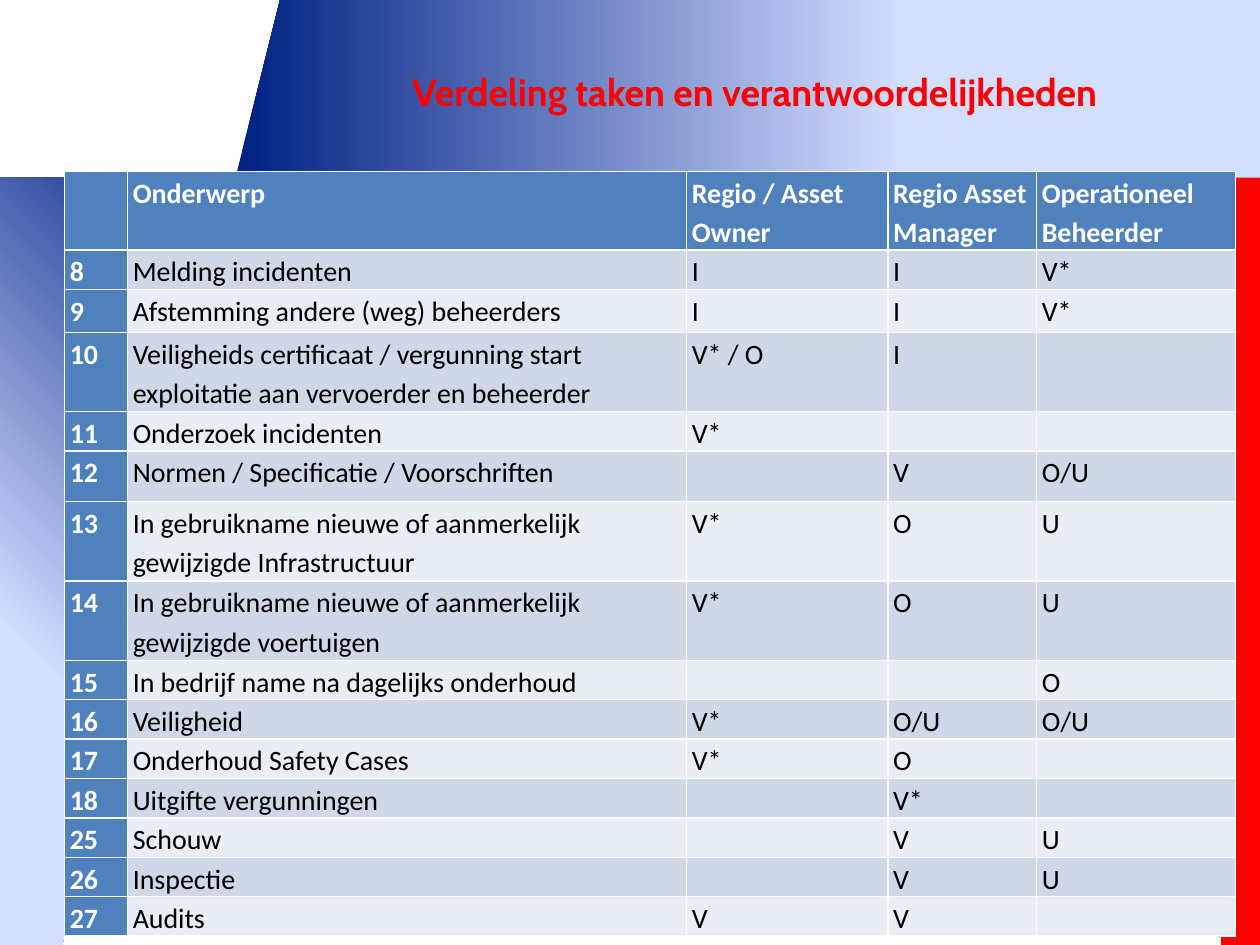
from lxml import etree
from pptx import Presentation
from pptx.dml.color import RGBColor
from pptx.enum.shapes import MSO_SHAPE
from pptx.enum.text import MSO_ANCHOR, PP_ALIGN
from pptx.oxml import parse_xml
from pptx.oxml.ns import nsdecls, qn
from pptx.util import Pt

COLORS = {
    "red": "FF0000", "white": "FFFFFF", "black": "000000",
    "header": "4F81BD", "dark band": "D0D8E8", "light band": "E9EDF4",
}
GRADIENT = [(0, "002083"), (53, "D4DEFF"), (83, "D4DEFF"), (100, "96AB94")]

COLUMN_WIDTHS = [36, 319.5, 115, 85, 113.5]
ROW_HEIGHTS = [36, 17.3, 24.5, 45.4, 17.3, 28.8, 45.4, 45.4, 22.3] + [17.3] * 6
ROWS = [
    ("", "Onderwerp", "Regio / Asset Owner", "Regio Asset Manager",
     "Operationeel\nBeheerder"),
    ("8", "Melding incidenten", "I", "I", "V*"),
    ("9", "Afstemming andere (weg) beheerders", "I", "I", "V*"),
    ("10", "Veiligheids certificaat / vergunning start exploitatie "
           "aan vervoerder en beheerder", "V* / O", "I", ""),
    ("11", "Onderzoek incidenten", "V*", "", ""),
    ("12", "Normen / Specificatie / Voorschriften", "", "V", "O/U"),
    ("13", "In gebruikname nieuwe of aanmerkelijk gewijzigde Infrastructuur",
     "V*", "O", "U"),
    ("14", "In gebruikname nieuwe of aanmerkelijk gewijzigde voertuigen",
     "V*", "O", "U"),
    ("15", "In bedrijf name na dagelijks onderhoud", "", "", "O"),
    ("16", "Veiligheid", "V*", "O/U", "O/U"),
    ("17", "Onderhoud Safety Cases", "V*", "O", ""),
    ("18", "Uitgifte vergunningen", "", "V*", ""),
    ("25", "Schouw", "", "V", "U"),
    ("26", "Inspectie", "", "V", "U"),
    ("27", "Audits", "V", "V", ""),
]


def color(name):
    return RGBColor.from_string(COLORS[name])


def add_panel(slide, kind, left, top, width, height):
    shape = slide.shapes.add_shape(kind, Pt(left), Pt(top), Pt(width), Pt(height))
    shape.shadow.inherit = False
    shape.line.fill.background()
    shape.fill.solid()
    shape.fill.fore_color.rgb = color("red")
    return shape


def set_gradient(shape, angle):
    """Replace the solid fill by the blue gradient, angle in clockwise degrees."""
    stops = "".join(
        f'<a:gs pos="{position * 1000}"><a:srgbClr val="{value}"/></a:gs>'
        for position, value in GRADIENT)
    gradient = parse_xml(
        f'<a:gradFill {nsdecls("a")} rotWithShape="1"><a:gsLst>{stops}</a:gsLst>'
        f'<a:lin ang="{angle * 60000}" scaled="0"/></a:gradFill>')
    properties = shape.element.spPr
    properties.replace(properties.find(qn("a:solidFill")), gradient)


def add_background(slide):
    banner = add_panel(slide, MSO_SHAPE.PARALLELOGRAM, 134.6, 0, 720, 101.5)
    set_gradient(banner, 0)
    side = add_panel(slide, MSO_SHAPE.PARALLELOGRAM, -112.3, 101.5, 247.7, 489.6)
    side.adjustments[0] = 0.45
    set_gradient(side, 135)
    add_panel(slide, MSO_SHAPE.RECTANGLE, 697.7, 101.5, 22.3, 438.5)


def set_title(slide, text):
    title = slide.shapes.title
    title.left, title.top, title.width, title.height = (
        Pt(178.6), Pt(21.6), Pt(505.4), Pt(61.2))
    title.text_frame.text = text
    title.text_frame.word_wrap = True
    title.text_frame.vertical_anchor = MSO_ANCHOR.MIDDLE
    paragraph = title.text_frame.paragraphs[0]
    paragraph.alignment = PP_ALIGN.CENTER
    font = paragraph.font
    font.name, font.size, font.bold = "Cabin", Pt(21.6), True
    font.color.rgb = color("red")
    # Bring the title in front of the background panels
    title.element.getparent().append(title.element)


def fill_cell(cell, text, fill, is_heading):
    cell.fill.solid()
    cell.fill.fore_color.rgb = color(fill)
    cell.margin_left = cell.margin_right = Pt(3)
    cell.margin_top = cell.margin_bottom = Pt(0)
    cell.text = text
    for paragraph in cell.text_frame.paragraphs:
        paragraph.line_spacing = 1.15
        font = paragraph.font
        font.name, font.size, font.bold = "Calibri", Pt(16), is_heading
        font.color.rgb = color("white" if is_heading else "black")
        if not text:
            # An empty cell takes its line height from the end mark
            etree.SubElement(paragraph._p, qn("a:endParaRPr"), sz="1600")


def add_task_table(slide):
    frame = slide.shapes.add_table(
        len(ROWS), len(COLUMN_WIDTHS), Pt(36.9), Pt(97.9),
        Pt(sum(COLUMN_WIDTHS)), Pt(sum(ROW_HEIGHTS)))
    table = frame.table
    table.first_col = True
    for column, width in zip(table.columns, COLUMN_WIDTHS):
        column.width = Pt(width)
    for row, height in zip(table.rows, ROW_HEIGHTS):
        row.height = Pt(height)
    for row_index, texts in enumerate(ROWS):
        band = "dark band" if row_index % 2 else "light band"
        for column_index, text in enumerate(texts):
            is_heading = row_index == 0 or column_index == 0
            fill_cell(table.cell(row_index, column_index), text,
                      "header" if is_heading else band, is_heading)


def main():
    presentation = Presentation()
    presentation.slide_width, presentation.slide_height = Pt(720), Pt(540)
    slide = presentation.slides.add_slide(presentation.slide_layouts[5])
    add_background(slide)
    set_title(slide, "Verdeling taken en verantwoordelijkheden")
    add_task_table(slide)
    presentation.save("out.pptx")


if __name__ == "__main__":
    main()
